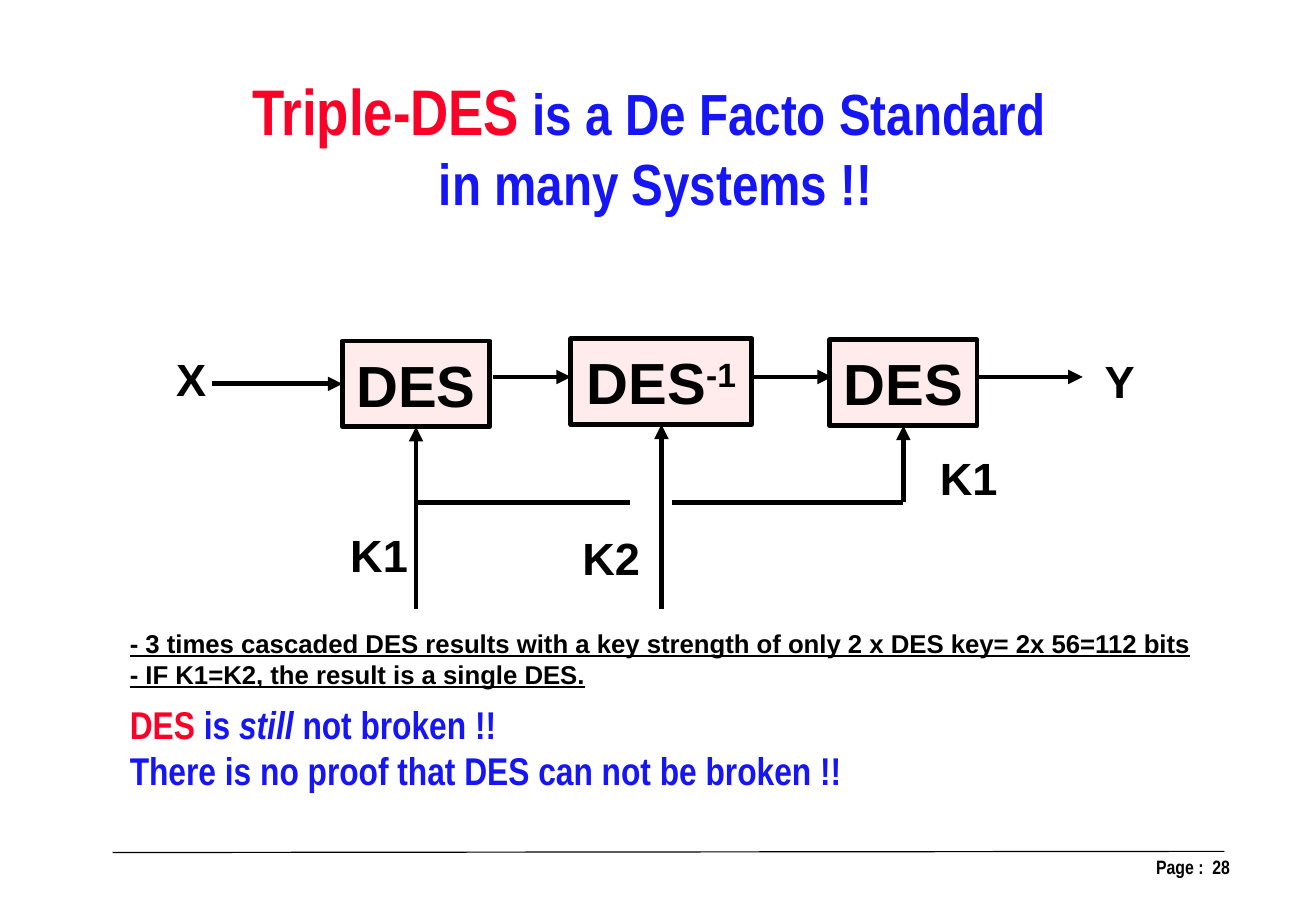
import dataclasses
import pptx
import pptx.util
import pptx.dml.color
import pptx.enum.shapes
import pptx.enum.text
import pptx.oxml
import pptx.oxml.ns

PX = 9144
ALIGN = pptx.enum.text.PP_ALIGN
ANCHOR = pptx.enum.text.MSO_ANCHOR
FIT = pptx.enum.text.MSO_AUTO_SIZE


@dataclasses.dataclass(frozen=True)
class Theme:
    ink: str = "000000"
    red: str = "FC0128"
    blue: str = "1515F5"
    pink: str = "FFEBEB"
    wide: str = "Arial"
    thin: str = "Arial Narrow"
    hero: int = 40
    head: int = 36
    label: int = 28
    claim: int = 24
    body: int = 16
    foot: int = 12
    bold: float = 3
    hair: float = 0.75


T = Theme()


def px(*nums):
    return [round(n * PX) for n in nums]


def paint(color):
    return pptx.dml.color.RGBColor.from_string(color)


def write(shape, text, size, font=T.wide, color=T.ink, align=ALIGN.LEFT,
          anchor=ANCHOR.TOP, wrap=False, pad=(10, 5), under=False):
    frame = shape.text_frame
    frame.word_wrap = wrap
    frame.auto_size = FIT.SHAPE_TO_FIT_TEXT
    frame.vertical_anchor = anchor
    frame.margin_left = frame.margin_right = px(pad[0])[0]
    frame.margin_top = frame.margin_bottom = px(pad[1])[0]
    rows = [[(text, {})]] if isinstance(text, str) else text
    for i, row in enumerate(rows):
        para = frame.add_paragraph() if i else frame.paragraphs[0]
        para.alignment = align
        for part, extra in row:
            run = para.add_run()
            run.text = part
            run.font.name = font
            run.font.bold = True
            run.font.underline = under
            run.font.italic = extra.get("italic", False)
            run.font.size = pptx.util.Pt(extra.get("size", size))
            run.font.color.rgb = paint(extra.get("color", color))
            if "base" in extra:
                run.font._element.set("baseline", str(extra["base"] * 1000))


def label(slide, box, text, size, **form):
    shape = slide.shapes.add_textbox(*px(*box))
    write(shape, text, size, **form)


def block(slide, box, text):
    kind = pptx.enum.shapes.MSO_SHAPE.RECTANGLE
    shape = slide.shapes.add_shape(kind, *px(*box))
    shape.shadow.inherit = False
    shape.fill.solid()
    shape.fill.fore_color.rgb = paint(T.pink)
    shape.line.color.rgb = paint(T.ink)
    shape.line.width = pptx.util.Pt(T.bold)
    write(shape, text, T.head, align=ALIGN.CENTER, anchor=ANCHOR.MIDDLE)
    return shape


def wire(slide, start, end, width=T.bold, arrow=False, goal=None, side=0):
    kind = pptx.enum.shapes.MSO_CONNECTOR.STRAIGHT
    line = slide.shapes.add_connector(kind, *px(*start, *end))
    line.line.color.rgb = paint(T.ink)
    line.line.width = pptx.util.Pt(width)
    name = pptx.oxml.ns.qn
    if arrow:
        tip = pptx.oxml.parse_xml(
            f'<a:tailEnd {pptx.oxml.ns.nsdecls("a")} type="triangle"/>')
        line.line._get_or_add_ln().append(tip)
    prop = line._element.spPr
    prop.append(prop.makeelement(name("a:effectLst"), {}))
    if goal is not None:
        line.end_connect(goal, side)


def title(slide, box):
    label(slide, box, [
        [("Triple-DES", {"size": T.hero, "color": T.red}),
         (" is a De Facto Standard ", {})],
        [("in many Systems !!", {})],
    ], T.head, font=T.thin, color=T.blue, align=ALIGN.CENTER)


def flow(slide, box):
    x, y, wide, high = box
    tall = 74
    plain = [[("DES", {})]]
    turned = [[("DES", {}), ("-1", {"base": 30})]]
    plan = [(153, 2, 127, plain), (350, 0, 156, turned), (573, 1, 127, plain)]
    blocks = [block(slide, (x + left, y + top, size, tall), text)
              for left, top, size, text in plan]
    mids = [x + left + size / 2 for left, top, size, text in plan]
    ends = [y + top + tall for left, top, size, text in plan]

    entry = y + plan[0][1] + tall / 2
    wire(slide, (x + 41, entry), (x + plan[0][0], entry), arrow=True,
         goal=blocks[0], side=1)
    for left, right in ((283, 350), (508, 575), (700, 791)):
        wire(slide, (x + left, y + 33), (x + right, y + 33), arrow=True)

    split = y + 141
    for goal, mid, end, start in zip(blocks, mids, ends,
                                     (y + high, y + high, split)):
        wire(slide, (mid, start), (mid, end), arrow=True, goal=goal, side=2)
    wire(slide, (mids[0], split), (x + 401, split))
    wire(slide, (x + 437, split), (mids[2], split))

    for text, left, top, size in (("X", 0, 6, 46), ("Y", 800, 8, 46),
                                  ("K1", 150, 158, 70), ("K2", 350, 160, 70),
                                  ("K1", 658, 91, 70)):
        label(slide, (x + left, y + top, size, 57), text, T.label)


def notes(slide, box):
    x, y, wide, high = box
    label(slide, (x, y, wide, 64), [
        [("- 3 times cascaded DES results with a key strength of only "
          "2 x DES key= 2x 56=112 bits", {})],
        [("- IF K1=K2, the result is a single DES.", {})],
    ], T.body, under=True)
    label(slide, (x, y + 63, 634, 107), [
        [("DES", {"color": T.red}), (" is ", {}),
         ("still ", {"italic": True}), ("not broken !!", {})],
        [("There is no proof that DES can not be broken !!", {})],
    ], T.claim, font=T.thin, color=T.blue)


def foot(slide, box):
    x, y, wide, high = box
    wire(slide, (x, y + 4), (x + 958, y + 3), width=T.hair)
    label(slide, (x + wide - 258, y, 258, high), "Page :  28", T.foot,
          font=T.thin, align=ALIGN.RIGHT, wrap=True, pad=(12, 6))


def main():
    deck = pptx.Presentation()
    deck.slide_width, deck.slide_height = px(1134, 788)
    slide = deck.slides.add_slide(deck.slide_layouts[6])
    foot(slide, (97, 731, 975, 31))
    title(slide, (203, 56, 724, 138))
    flow(slide, (142, 292, 846, 233))
    notes(slide, (102, 536, 952, 170))
    deck.save("out.pptx")


if __name__ == "__main__":
    main()
